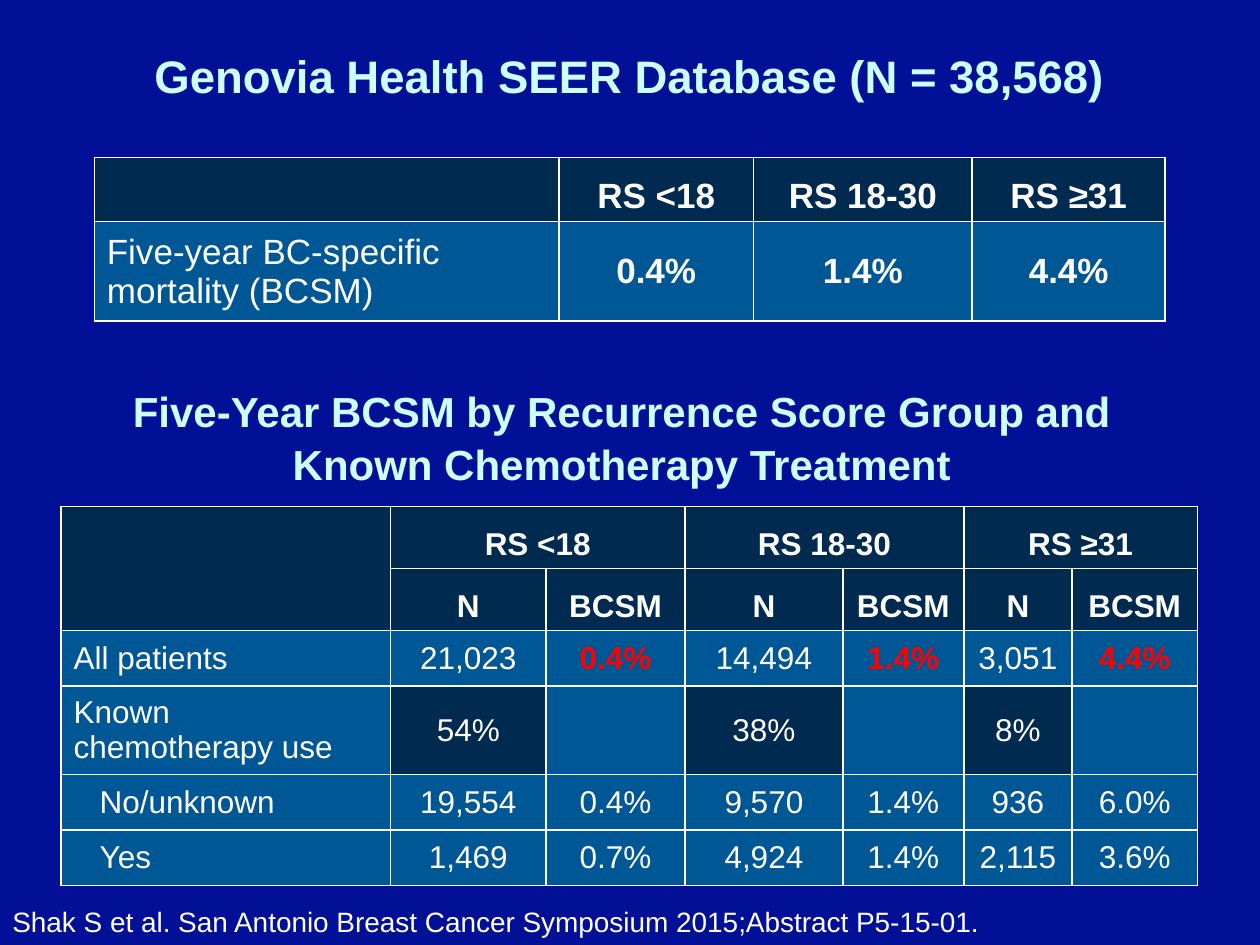
from dataclasses import dataclass

from lxml import etree
from pptx import Presentation
from pptx.dml.color import RGBColor
from pptx.enum.text import MSO_ANCHOR, MSO_AUTO_SIZE, PP_ALIGN
from pptx.oxml.ns import qn
from pptx.util import Cm, Pt

CENTER, LEFT = PP_ALIGN.CENTER, PP_ALIGN.LEFT
MIDDLE, BOTTOM = MSO_ANCHOR.MIDDLE, MSO_ANCHOR.BOTTOM
NO_AUTOFIT = MSO_AUTO_SIZE.NONE

FONT = "Arial"
NAVY, DARK, BLUE = "011097", "012A50", "005796"
WHITE, CYAN, RED = "FFFFFF", "CCFFFF", "FF0000"


@dataclass
class Style:
    size: float
    color: str = WHITE
    bold: bool = False
    align: PP_ALIGN = LEFT


@dataclass
class TableSpec:
    left: float
    top: float
    cols: list[float]
    rows: list[float]
    texts: list[list[str]]
    size: float
    header_rows: int
    bold_cells: set[tuple[int, int]]
    bold_color: str = WHITE
    dark_cells: frozenset = frozenset()
    indented_rows: tuple = ()
    merges: tuple = ()


def rgb(color: str) -> RGBColor:
    return RGBColor.from_string(color)


def add_run(p, text: str, style: Style) -> None:
    p.alignment = style.align
    r = p.add_run()
    r.text = text
    r.font.name = FONT
    r.font.size = Pt(style.size)
    r.font.bold = style.bold
    r.font.color.rgb = rgb(style.color)


def add_text(s, box: tuple, lines: list[str], style: Style, before: float = 0) -> None:
    tf = s.shapes.add_textbox(*map(Cm, box)).text_frame
    tf.word_wrap = True
    for i, line in enumerate(lines):
        p = tf.paragraphs[0] if i == 0 else tf.add_paragraph()
        p.space_before = Pt(before)
        add_run(p, line, style)


def set_borders(cell, color: str, width: float) -> None:
    tcPr = cell._tc.get_or_add_tcPr()
    for side in ("lnL", "lnR", "lnT", "lnB"):
        ln = etree.SubElement(tcPr, qn(f"a:{side}"), w=str(Pt(width)))
        fill = etree.SubElement(ln, qn("a:solidFill"))
        etree.SubElement(fill, qn("a:srgbClr"), val=color)


def add_table(s, spec: TableSpec) -> None:
    frame = s.shapes.add_table(
        len(spec.rows), len(spec.cols), Cm(spec.left), Cm(spec.top),
        Cm(sum(spec.cols)), Cm(sum(spec.rows)))
    table = frame.table
    table.first_row = table.horz_banding = False
    for column, width in zip(table.columns, spec.cols):
        column.width = Cm(width)
    for row, height in zip(table.rows, spec.rows):
        row.height = Cm(height)

    for i, texts in enumerate(spec.texts):
        header = i < spec.header_rows
        for j, text in enumerate(texts):
            cell = table.cell(i, j)
            set_borders(cell, WHITE, 1)
            cell.fill.solid()
            dark = header or (i, j) in spec.dark_cells
            cell.fill.fore_color.rgb = rgb(DARK if dark else BLUE)
            cell.vertical_anchor = BOTTOM if header else MIDDLE
            if j == 0 and i in spec.indented_rows:
                cell.margin_left = Cm(0.78)
            if text:
                strong = (i, j) in spec.bold_cells
                style = Style(spec.size, spec.bold_color if strong else WHITE,
                              header or strong, CENTER if j else LEFT)
                add_run(cell.text_frame.paragraphs[0], text, style)

    for first, last in spec.merges:
        table.cell(*first).merge(table.cell(*last))


GROUPS = ["RS <18", "RS 18-30", "RS ≥31"]

MORTALITY = TableSpec(
    left=1.9, top=3.18, cols=[9.37, 3.92, 4.41, 3.89], rows=[1.29, 2],
    texts=[["", *GROUPS],
           ["Five-year BC-specific mortality (BCSM)", "0.4%", "1.4%", "4.4%"]],
    size=20, header_rows=1, bold_cells={(1, 1), (1, 2), (1, 3)})

TREATMENT = TableSpec(
    left=1.23, top=10.21,
    cols=[6.64, 3.14, 2.8, 3.18, 2.44, 2.18, 2.53],
    rows=[1.25, 1.25, 1.12, 1.78, 1.12, 1.12],
    texts=[
        ["", GROUPS[0], "", GROUPS[1], "", GROUPS[2], ""],
        [""] + ["N", "BCSM"] * 3,
        ["All patients", "21,023", "0.4%", "14,494", "1.4%", "3,051", "4.4%"],
        ["Known chemotherapy use", "54%", "", "38%", "", "8%", ""],
        ["No/unknown", "19,554", "0.4%", "9,570", "1.4%", "936", "6.0%"],
        ["Yes", "1,469", "0.7%", "4,924", "1.4%", "2,115", "3.6%"],
    ],
    size=18, header_rows=2,
    bold_cells={(2, 2), (2, 4), (2, 6)}, bold_color=RED,
    dark_cells=frozenset({(3, 1), (3, 3), (3, 5)}),
    indented_rows=(4, 5),
    merges=(((0, 0), (1, 0)), *(((0, j), (0, j + 1)) for j in (1, 3, 5))))


def main() -> None:
    prs = Presentation()
    prs.slide_width, prs.slide_height = Cm(25.4), Cm(19.05)
    s = prs.slides.add_slide(prs.slide_layouts[5])
    s.background.fill.solid()
    s.background.fill.fore_color.rgb = rgb(NAVY)

    # Title
    title = s.shapes.title
    title.left, title.top, title.width, title.height = map(Cm, (1.9, 0, 21.6, 3.18))
    tf = title.text_frame
    tf.auto_size = NO_AUTOFIT
    tf.vertical_anchor = MIDDLE
    p = tf.paragraphs[0]
    p.line_spacing = 0.9
    add_run(p, "Genovia Health SEER Database (N = 38,568)", Style(26, CYAN, True, CENTER))

    # Source line
    add_text(s, (0, 18.11, 24.84, 0.94),
             ["Shak S et al. San Antonio Breast Cancer Symposium 2015;Abstract P5-15-01."],
             Style(16))

    # Tables, with the heading of the second one
    add_table(s, MORTALITY)
    add_table(s, TREATMENT)
    add_text(s, (0.94, 7.65, 23.19, 2.31),
             ["Five-Year BCSM by Recurrence Score Group and", "Known Chemotherapy Treatment"],
             Style(24, CYAN, True, CENTER), before=1.5)

    prs.save("out.pptx")


if __name__ == "__main__":
    main()
